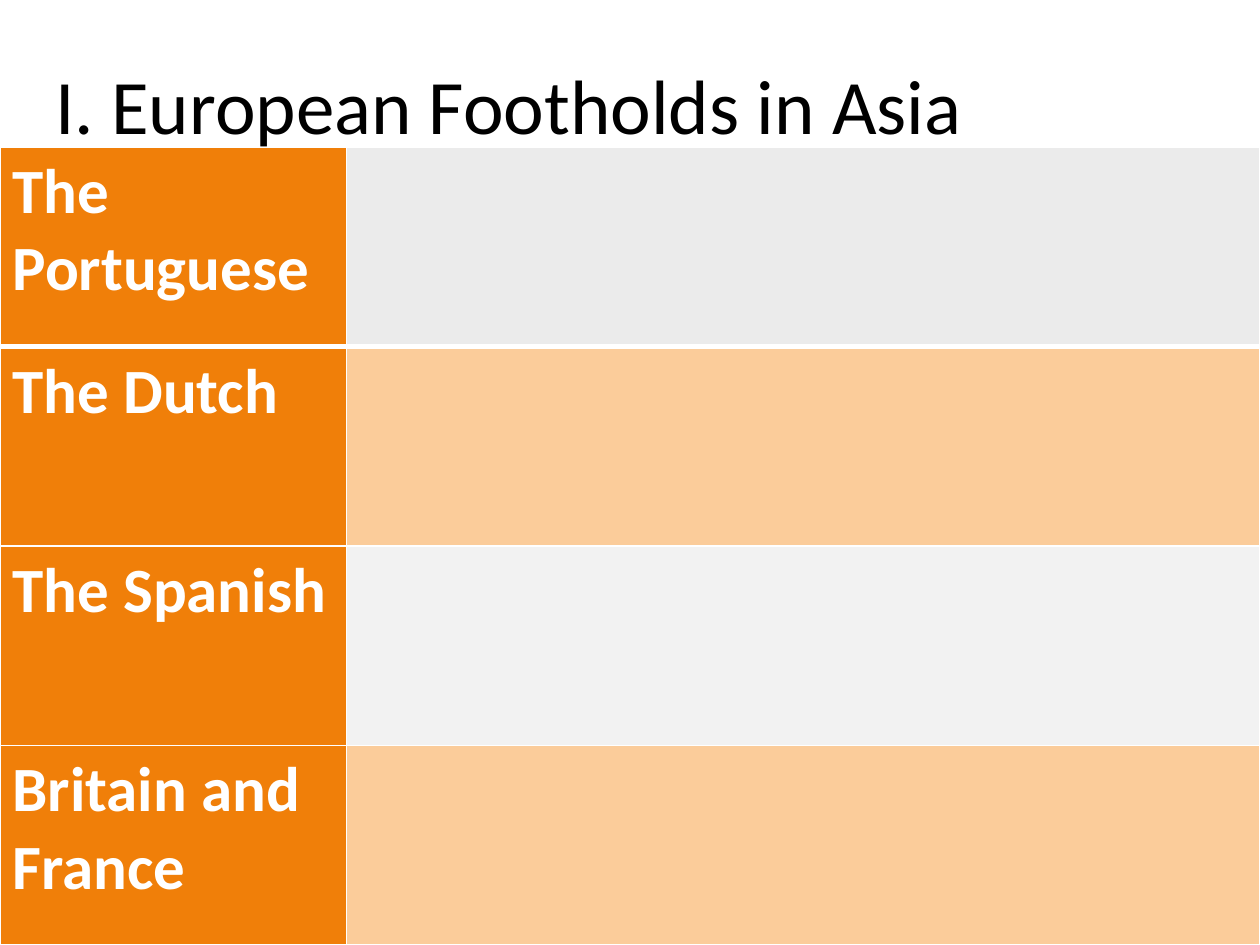
"""Build the "European Footholds in Asia" slide: a title and a four-row table."""
from lxml.etree import SubElement
from pptx import Presentation
from pptx.dml.color import RGBColor as RGB
from pptx.enum.text import MSO_ANCHOR as Anchor, PP_ALIGN as Align
from pptx.oxml.ns import qn
from pptx.util import Cm, Pt

BLACK = RGB(0x00, 0x00, 0x00)
WHITE = RGB(0xFF, 0xFF, 0xFF)
ORANGE = RGB(0xF0, 0x7F, 0x09)
PEACH = RGB(0xFB, 0xCC, 0x9A)
GREY = RGB(0xEB, 0xEB, 0xEB)
PALE_GREY = RGB(0xF2, 0xF2, 0xF2)

TITLE = "I. European Footholds in Asia"
ROWS = [
    ("The Portuguese", GREY),
    ("The Dutch", PEACH),
    ("The Spanish", PALE_GREY),
    ("Britain and France", PEACH),
]
TITLE_BOX = {"left": Cm(0.86), "top": Cm(0.51), "width": Cm(25.2), "height": Cm(3.18)}
TITLE_FONT = {"name": "Calibri", "size": Pt(44), "bold": False}
LABEL_FONT = {"name": "Calibri", "size": Pt(36), "bold": True}
TABLE_TOP = Cm(2.97)
LABEL_WIDTH = Cm(6.99)
THIN, THICK = Pt(1), Pt(3)


def set_attrs(obj, values):
    for name, value in values.items():
        setattr(obj, name, value)


def write(tf, text, font, color):
    p = tf.paragraphs[0]
    p.alignment = Align.LEFT
    r = p.add_run()
    r.text = text
    set_attrs(r.font, font)
    r.font.color.rgb = color


def set_borders(cell, widths):
    tcPr = cell._tc.get_or_add_tcPr()
    for side, width in widths.items():
        ln = SubElement(tcPr, qn(f"a:ln{side}"), w=str(width))
        fill = SubElement(ln, qn("a:solidFill"))
        SubElement(fill, qn("a:srgbClr"), val=str(WHITE))


def main():
    prs = Presentation()
    prs.slide_width, prs.slide_height = Cm(25.4), Cm(19.05)
    s = prs.slides.add_slide(prs.slide_layouts[5])

    title = s.shapes.title
    set_attrs(title, TITLE_BOX)
    title.text_frame.vertical_anchor = Anchor.MIDDLE
    write(title.text_frame, TITLE, TITLE_FONT, BLACK)

    height = prs.slide_height - TABLE_TOP
    table = s.shapes.add_table(len(ROWS), 2, 0, TABLE_TOP, prs.slide_width, height).table
    table.columns[0].width = LABEL_WIDTH
    table.columns[1].width = prs.slide_width - LABEL_WIDTH

    for i, (label, color) in enumerate(ROWS):
        top = THICK if i == 1 else THIN
        bottom = THICK if i == 0 else THIN
        for j, fill in enumerate((ORANGE, color)):
            cell = table.cell(i, j)
            set_borders(cell, {"L": THIN, "R": THIN, "T": top, "B": bottom})
            cell.fill.solid()
            cell.fill.fore_color.rgb = fill
        write(table.cell(i, 0).text_frame, label, LABEL_FONT, WHITE)

    prs.save("out.pptx")


if __name__ == "__main__":
    main()
